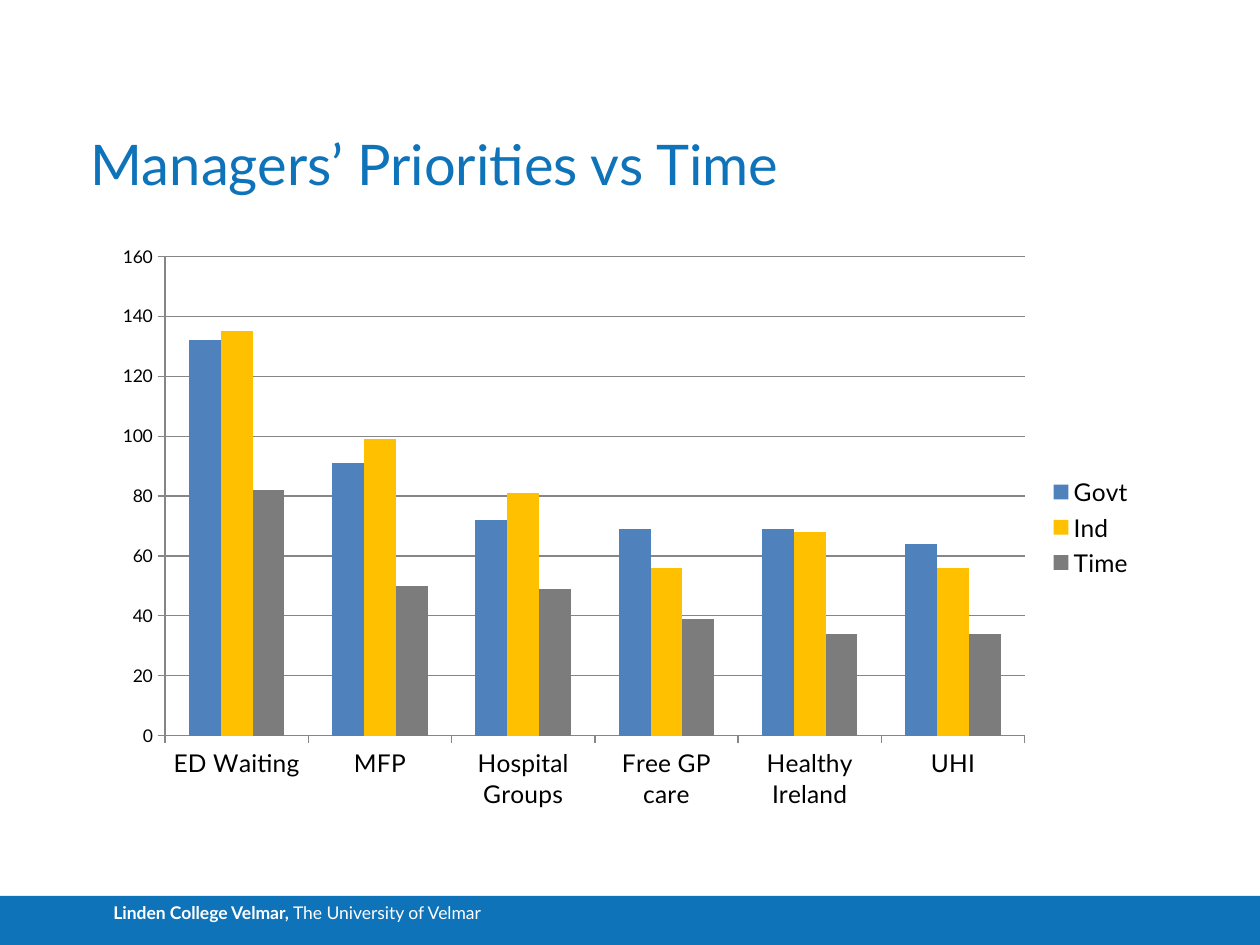
from pptx import Presentation
from pptx.chart.data import CategoryChartData
from pptx.dml.color import RGBColor
from pptx.enum.chart import XL_CHART_TYPE as ChartType
from pptx.enum.chart import XL_LEGEND_POSITION as LegendPosition
from pptx.enum.chart import XL_TICK_MARK as TickMark
from pptx.enum.shapes import MSO_SHAPE as Preset
from pptx.enum.text import MSO_ANCHOR as Anchor
from pptx.enum.text import PP_ALIGN as Align
from pptx.util import Inches, Pt

FONT = "Lato"
BLUE, WHITE, BLACK, AXIS_GRAY = "0E73B9", "FFFFFF", "000000", "868686"

CATEGORIES = ["ED Waiting", "MFP", "Hospital Groups",
              "Free GP care", "Healthy Ireland", "UHI"]
SERIES = [
    ("Govt", "4F81BD", [132, 91, 72, 69, 69, 64]),
    ("Ind", "FFC000", [135, 99, 81, 56, 68, 56]),
    ("Time", "7C7C7C", [82, 50, 49, 39, 34, 34]),
]


def color(hex_string):
    return RGBColor.from_string(hex_string)


def style_font(font, size, hex_string, bold=False):
    font.name = FONT
    font.size = Pt(size)
    font.bold = bold
    font.color.rgb = color(hex_string)


def add_run(paragraph, text, size, hex_string, bold=False):
    run = paragraph.add_run()
    run.text = text
    style_font(run.font, size, hex_string, bold)


def add_footer(slide, left, top, width, height):
    bar = slide.shapes.add_shape(Preset.RECTANGLE, Inches(left), Inches(top),
                                 Inches(width), Inches(height))
    bar.shadow.inherit = False
    bar.fill.solid()
    bar.fill.fore_color.rgb = color(BLUE)
    bar.line.fill.background()

    # Institution name, indented from the slide edge
    frame = bar.text_frame
    frame.vertical_anchor = Anchor.TOP
    frame.margin_left = Inches(0.9)
    paragraph = frame.paragraphs[0]
    paragraph.alignment = Align.LEFT
    add_run(paragraph, "Linden College Velmar, ", 10, WHITE, bold=True)
    add_run(paragraph, "The University of Velmar", 10, WHITE)


def add_title(slide, left, top, width, height):
    title = slide.shapes.title
    title.left, title.top = Inches(left), Inches(top)
    title.width, title.height = Inches(width), Inches(height)
    frame = title.text_frame
    frame.word_wrap = True
    frame.vertical_anchor = Anchor.BOTTOM
    frame.margin_left = frame.margin_right = 0
    frame.margin_top = frame.margin_bottom = 0
    paragraph = frame.paragraphs[0]
    paragraph.alignment = Align.LEFT
    add_run(paragraph, "Managers’ Priorities vs Time", 32, BLUE)


def add_priorities_chart(slide, left, top, width, height):
    data = CategoryChartData()
    data.categories = CATEGORIES
    for name, _, values in SERIES:
        data.add_series(name, values)
    chart = slide.shapes.add_chart(
        ChartType.COLUMN_CLUSTERED, Inches(left), Inches(top),
        Inches(width), Inches(height), data).chart
    chart.has_title = False
    style_font(chart.font, 10, BLACK)

    # Columns
    plot = chart.plots[0]
    plot.gap_width = 150
    plot.overlap = 0
    plot.vary_by_categories = False
    for series, (_, fill, _) in zip(plot.series, SERIES):
        series.format.fill.solid()
        series.format.fill.fore_color.rgb = color(fill)

    # Axes and gridlines
    category_axis, value_axis = chart.category_axis, chart.value_axis
    value_axis.minimum_scale, value_axis.maximum_scale = 0, 160
    value_axis.major_unit = 20
    value_axis.has_major_gridlines = True
    for axis, size in ((category_axis, 14), (value_axis, 10)):
        axis.major_tick_mark = TickMark.OUTSIDE
        axis.minor_tick_mark = TickMark.NONE
        style_font(axis.tick_labels.font, size, BLACK)
    for lined in (category_axis, value_axis, value_axis.major_gridlines):
        lined.format.line.color.rgb = color(AXIS_GRAY)
        lined.format.line.width = Pt(0.75)

    # Legend
    chart.has_legend = True
    chart.legend.position = LegendPosition.RIGHT
    chart.legend.include_in_layout = False
    style_font(chart.legend.font, 14, BLACK)


def main():
    presentation = Presentation()
    presentation.slide_width = Inches(10)
    presentation.slide_height = Inches(7.5)
    slide = presentation.slides.add_slide(presentation.slide_layouts[5])
    slide.background.fill.solid()
    slide.background.fill.fore_color.rgb = color(WHITE)

    add_footer(slide, 0, 7.11, 10, 0.39)
    add_title(slide, 0.72, 0.31, 9, 1.25)
    add_priorities_chart(slide, 0.81, 1.86, 8.29, 4.65)
    presentation.save("out.pptx")


if __name__ == "__main__":
    main()
